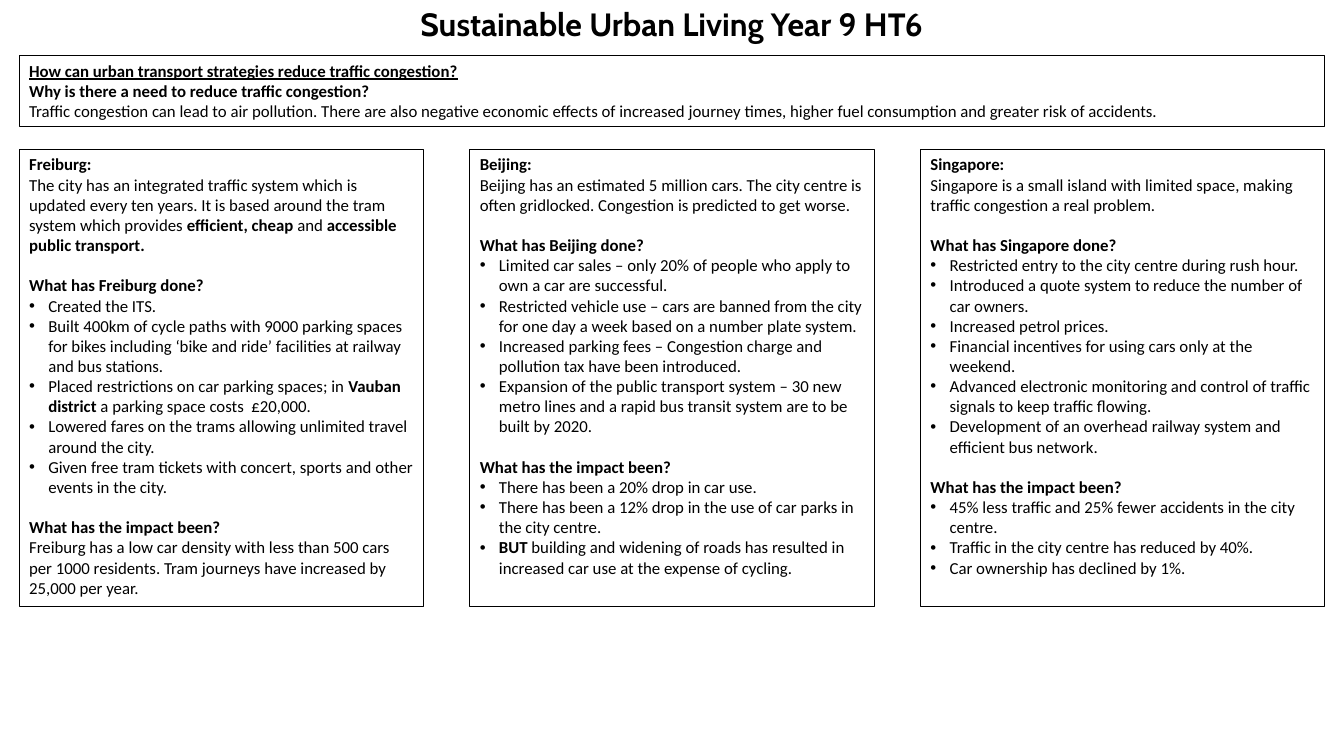
from pptx import Presentation
from pptx.dml.color import RGBColor
from pptx.enum.shapes import MSO_SHAPE
from pptx.enum.text import MSO_ANCHOR, PP_ALIGN
from pptx.oxml.ns import qn
from pptx.util import Inches, Pt
from lxml.etree import SubElement

CITIES = [
    (
        "Freiburg",
        "The city has an integrated traffic system which is updated every ten years. It is based "
        "around the tram system which provides **efficient, cheap **and **accessible public transport.**",
        [
            "Created the ITS.",
            "Built 400km of cycle paths with 9000 parking spaces for bikes including ‘bike and ride’ "
            "facilities at railway and bus stations.",
            "Placed restrictions on car parking spaces; in **Vauban district** a parking space costs  £20,000.",
            "Lowered fares on the trams allowing unlimited travel around the city.",
            "Given free tram tickets with concert, sports and other events in the city.",
        ],
        [
            "Freiburg has a low car density with less than 500 cars per 1000 residents. "
            "Tram journeys have increased by 25,000 per year.",
        ],
    ),
    (
        "Beijing",
        "Beijing has an estimated 5 million cars. The city centre is often gridlocked. "
        "Congestion is predicted to get worse.",
        [
            "Limited car sales – only 20% of people who apply to own a car are successful.",
            "Restricted vehicle use – cars are banned from the city for one day a week based on a "
            "number plate system.",
            "Increased parking fees – Congestion charge and pollution tax have been introduced.",
            "Expansion of the public transport system – 30 new metro lines and a rapid bus transit "
            "system are to be built by 2020.",
        ],
        [
            "There has been a 20% drop in car use.",
            "There has been a 12% drop in the use of car parks in the city centre.",
            "**BUT **building and widening of roads has resulted in increased car use at the expense "
            "of cycling.",
        ],
    ),
    (
        "Singapore",
        "Singapore is a small island with limited space, making traffic congestion a real problem.",
        [
            "Restricted entry to the city centre during rush hour.",
            "Introduced a quote system to reduce the number of car owners.",
            "Increased petrol prices.",
            "Financial incentives for using cars only at the weekend.",
            "Advanced electronic monitoring and control of traffic signals to keep traffic flowing.",
            "Development of an overhead railway system and efficient bus network.",
        ],
        [
            "45% less traffic and 25% fewer accidents in the city centre.",
            "Traffic in the city centre has reduced by 40%.",
            "Car ownership has declined by 1%.",
        ],
    ),
]


def color(value):
    return RGBColor.from_string(value)


class Sheet:
    ink = "000000"
    body_font, body_size = "Calibri", 12
    title_font, title_size = "Cabin", 23
    section_gap = 14.4
    bullet_indent = Inches(0.19)

    def __init__(self, slide):
        self.slide = slide

    def style(self, span, font, size, bold):
        span.font.name = font
        span.font.size = Pt(size)
        span.font.bold = bold
        span.font.color.rgb = color(self.ink)

    def title(self, text, left, top, width, height):
        box = self.slide.shapes.add_textbox(Inches(left), Inches(top), Inches(width), Inches(height))
        frame = box.text_frame
        frame.word_wrap = True
        frame.vertical_anchor = MSO_ANCHOR.BOTTOM
        frame.text = text
        para = frame.paragraphs[0]
        para.alignment = PP_ALIGN.CENTER
        para.line_spacing = 0.9
        self.style(para.runs[0], self.title_font, self.title_size, True)

    def panel(self, left, top, width, height):
        box = self.slide.shapes.add_shape(
            MSO_SHAPE.RECTANGLE, Inches(left), Inches(top), Inches(width), Inches(height))
        box.shadow.inherit = False
        box.fill.background()
        box.line.color.rgb = color(self.ink)
        box.line.width = Pt(0.75)
        frame = box.text_frame
        frame.word_wrap = True
        frame.vertical_anchor = MSO_ANCHOR.TOP
        return frame

    def text(self, frame, marked_text):
        para = frame.paragraphs[0]
        if para.runs:
            para = frame.add_paragraph()
        para.alignment = PP_ALIGN.LEFT
        for index, part in enumerate(marked_text.split("**")):
            if part:
                span = para.add_run()
                span.text = part
                self.style(span, self.body_font, self.body_size, index % 2 == 1)
        return para

    def heading(self, frame, text, gap=False):
        para = self.text(frame, f"**{text}**")
        if gap:
            para.space_before = Pt(self.section_gap)
        return para

    def bullet(self, frame, marked_text):
        properties = self.text(frame, marked_text)._p.get_or_add_pPr()
        properties.set("marL", str(self.bullet_indent))
        properties.set("indent", str(-self.bullet_indent))
        SubElement(properties, qn("a:buFont")).set("typeface", "Arial")
        SubElement(properties, qn("a:buChar")).set("char", "•")

    def city(self, left, top, width, height, name, intro, actions, impacts):
        frame = self.panel(left, top, width, height)
        self.heading(frame, f"{name}:")
        self.text(frame, intro)
        self.heading(frame, f"What has {name} done?", gap=True)
        for action in actions:
            self.bullet(frame, action)
        self.heading(frame, "What has the impact been?", gap=True)
        add_impact = self.bullet if len(impacts) > 1 else self.text
        for impact in impacts:
            add_impact(frame, impact)


def main():
    deck = Presentation()
    deck.slide_width, deck.slide_height = Inches(13.33), Inches(7.5)
    sheet = Sheet(deck.slides.add_slide(deck.slide_layouts[6]))

    sheet.title("Sustainable Urban Living Year 9 HT6", 0, 0.04, 13.33, 0.44)

    margin, column_width, column_step = 0.19, 4.01, 4.47
    question = sheet.panel(margin, 0.55, 2 * column_step + column_width, 0.71)
    para = sheet.heading(question, "How can urban transport strategies reduce traffic congestion?")
    para.runs[0].font.underline = True
    sheet.heading(question, "Why is there a need to reduce traffic congestion?")
    sheet.text(question, "Traffic congestion can lead to air pollution. There are also negative economic "
               "effects of increased journey times, higher fuel consumption and greater risk of accidents.")

    for index, city in enumerate(CITIES):
        sheet.city(margin + index * column_step, 1.48, column_width, 4.54, *city)

    deck.save("out.pptx")


if __name__ == "__main__":
    main()
